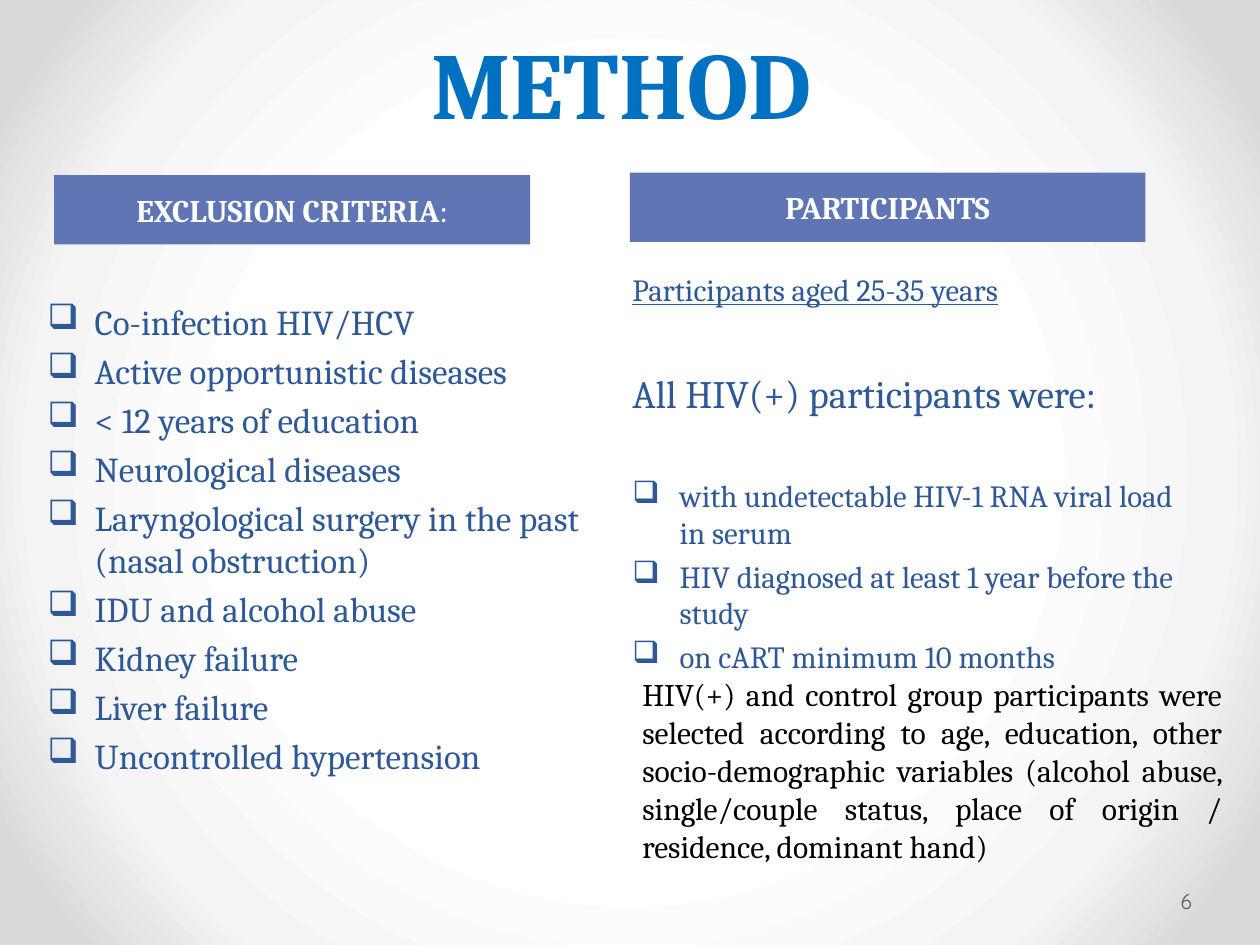
"""Build the METHOD slide with exclusion criteria and participants."""
from pptx import Presentation
from pptx.dml.color import RGBColor
from pptx.enum.shapes import MSO_SHAPE as Shape
from pptx.enum.text import MSO_ANCHOR as Anchor, MSO_AUTO_SIZE as AutoSize, PP_ALIGN as Align
from pptx.oxml import parse_xml
from pptx.oxml.ns import nsdecls
from pptx.util import Cm, Pt

TITLE_BLUE = RGBColor(0x00, 0x70, 0xC0)
TEXT_BLUE = RGBColor(0x2F, 0x58, 0x97)
BAR_BLUE = RGBColor(0x60, 0x76, 0xB4)
WHITE = RGBColor(0xFF, 0xFF, 0xFF)
BLACK = RGBColor(0x00, 0x00, 0x00)
GREY = RGBColor(0x59, 0x59, 0x59)
GLOW = ((50, "FFFFFF"), (76, "F4F4F4"), (92, "DADADA"))
EXCLUSIONS = (
    "Co-infection HIV/HCV",
    "Active opportunistic diseases",
    "< 12 years of education",
    "Neurological diseases",
    "Laryngological surgery in the past (nasal obstruction)",
    "IDU and alcohol abuse",
    "Kidney failure",
    "Liver failure",
    "Uncontrolled hypertension",
)
CONDITIONS = (
    "with undetectable HIV-1 RNA viral load in serum",
    "HIV diagnosed at least 1 year before the study",
    "on cART minimum 10 months",
)


class SlideBuilder:
    """Hold the style and the current slide."""

    font = "Cambria"
    indent = Cm(0.95)

    def __init__(self, slide):
        self.slide = slide

    def background(self, stops):
        marks = "".join(
            f'<a:gs pos="{position * 1000}"><a:srgbClr val="{color}"/></a:gs>'
            for position, color in stops
        )
        self.slide.element.cSld.insert(0, parse_xml(
            f'<p:bg {nsdecls("p", "a")}><p:bgPr><a:gradFill rotWithShape="1">'
            f'<a:gsLst>{marks}</a:gsLst><a:path path="circle">'
            '<a:fillToRect l="50000" t="50000" r="50000" b="50000"/></a:path>'
            '</a:gradFill><a:effectLst/></p:bgPr></p:bg>'
        ))

    def box(self, left, top, width, height, anchor=Anchor.TOP):
        shape = self.slide.shapes.add_textbox(Cm(left), Cm(top), Cm(width), Cm(height))
        frame = shape.text_frame
        frame.word_wrap = True
        frame.vertical_anchor = anchor
        return frame

    def bar(self, left, top, width, height):
        shape = self.slide.shapes.add_shape(
            Shape.RECTANGLE, Cm(left), Cm(top), Cm(width), Cm(height))
        shape.shadow.inherit = False
        shape.fill.solid()
        shape.fill.fore_color.rgb = BAR_BLUE
        shape.line.fill.background()
        shape.text_frame.vertical_anchor = Anchor.MIDDLE
        return shape.text_frame

    def paragraph(self, frame, align=Align.LEFT, before=0):
        first = frame.paragraphs[0]
        paragraph = frame.add_paragraph() if first.runs else first
        paragraph.alignment = align
        paragraph.space_before = Pt(before)
        return paragraph

    def run(self, paragraph, text, size, color, bold=False, underline=False, font=None):
        run = paragraph.add_run()
        run.text = text
        run.font.name = font or self.font
        run.font.size = Pt(size)
        run.font.color.rgb = color
        run.font.bold = bold
        run.font.underline = underline

    def bullets(self, frame, items, size, first_before):
        for index, item in enumerate(items):
            paragraph = self.paragraph(frame, before=size / 5 if index else first_before)
            properties = paragraph._p.get_or_add_pPr()
            properties.set("marL", str(self.indent))
            properties.set("indent", str(-self.indent))
            properties.append(parse_xml(f'<a:buChar {nsdecls("a")} char="❑"/>'))
            self.run(paragraph, item, size, TEXT_BLUE)


def main():
    presentation = Presentation()
    presentation.slide_width, presentation.slide_height = Cm(25.4), Cm(19.05)
    slide = presentation.slides.add_slide(presentation.slide_layouts[6])
    builder = SlideBuilder(slide)
    builder.background(GLOW)

    title = builder.paragraph(builder.box(1.09, 0.15, 22.86, 2.77, Anchor.BOTTOM), Align.CENTER)
    title.line_spacing = Pt(58)
    builder.run(title, "METHOD", 54, TITLE_BLUE, bold=True)

    participants = builder.box(12.5, 5.33, 12.01, 7.8)
    age = builder.paragraph(participants)
    builder.run(age, "Participants aged 25-35 years", 17.6, TEXT_BLUE, underline=True)
    lead = builder.paragraph(participants, before=35.7)
    builder.run(lead, "All HIV(+) participants were:", 22.2, TEXT_BLUE)
    builder.bullets(participants, CONDITIONS, 17.6, 34.6)

    exclusions = builder.box(0.71, 4.93, 11.4, 11.76)
    exclusions.margin_top = Cm(1.12)
    builder.bullets(exclusions, EXCLUSIONS, 20, 0)

    heading = builder.paragraph(builder.bar(1.09, 3.53, 9.6, 1.4), Align.CENTER)
    builder.run(heading, "EXCLUSION CRITERIA", 18, WHITE, bold=True)
    builder.run(heading, ":", 18, WHITE)
    heading = builder.paragraph(builder.bar(12.7, 3.48, 10.39, 1.4), Align.CENTER)
    builder.run(heading, "PARTICIPANTS", 18, WHITE, bold=True)

    selection = builder.box(12.7, 13.49, 12.19, 4.88)
    selection.auto_size = AutoSize.SHAPE_TO_FIT_TEXT
    builder.run(
        builder.paragraph(selection, Align.JUSTIFY),
        "HIV(+) and control group participants were selected according to age, "
        "education, other socio-demographic variables (alcohol abuse, "
        "single/couple status, place of origin / residence, dominant hand)",
        18, BLACK)

    number = builder.box(23.72, 17.65, 1.55, 1.02, Anchor.MIDDLE)
    number.margin_left = Cm(0.08)
    number.margin_right = Cm(0.13)
    builder.run(builder.paragraph(number), "6", 12, GREY, font="Quicksand")

    presentation.save("out.pptx")


if __name__ == "__main__":
    main()
